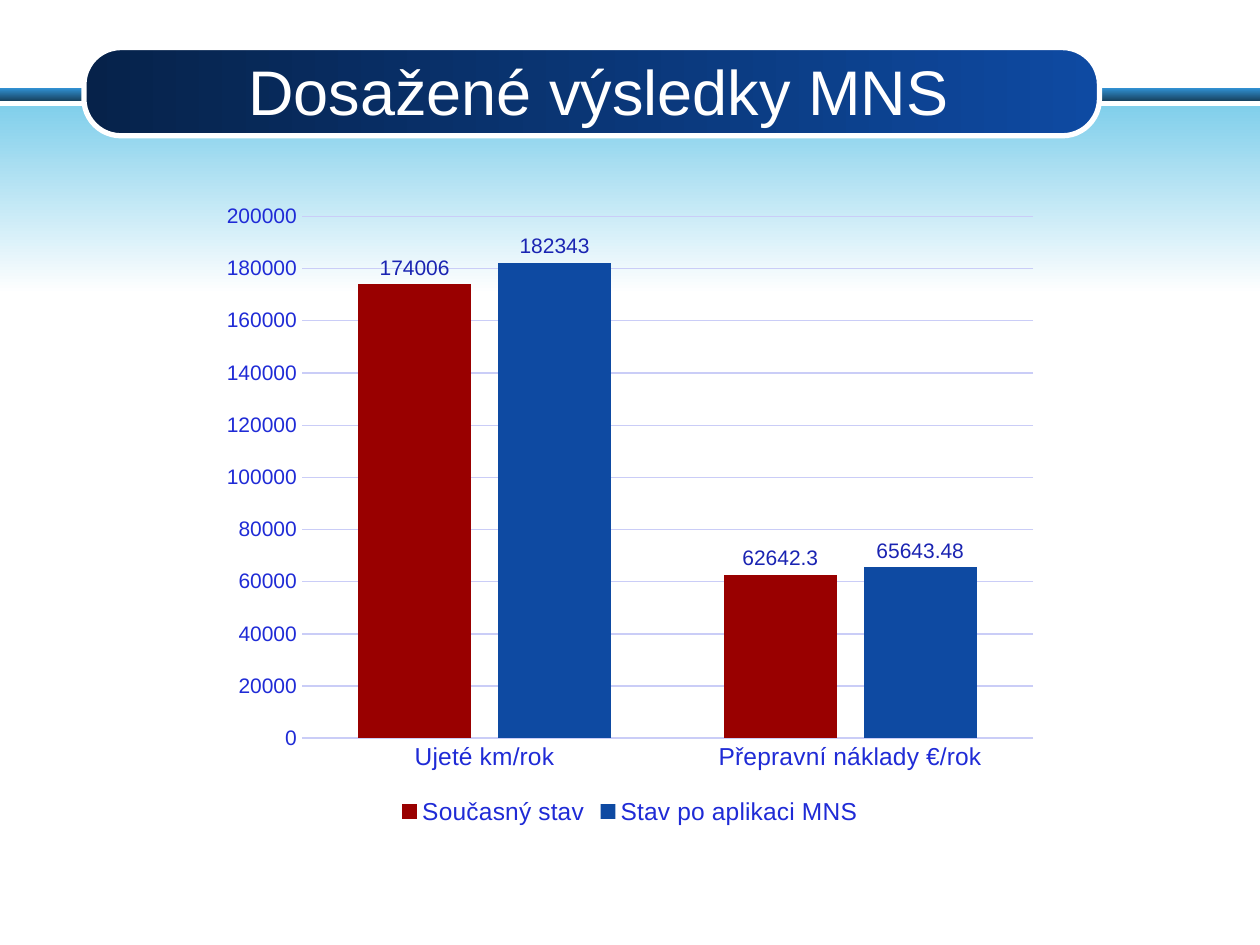
"""Build a slide with a title band and a clustered column chart."""
import pptx
import pptx.chart.data
import pptx.dml.color
import pptx.enum.chart
import pptx.enum.shapes
import pptx.enum.text
import pptx.util

Pt = pptx.util.Pt
RGBColor = pptx.dml.color.RGBColor
SHAPE = pptx.enum.shapes.MSO_SHAPE
CHART = pptx.enum.chart

WHITE = RGBColor(0xFF, 0xFF, 0xFF)
SKY = RGBColor(0x81, 0xCF, 0xEB)
AZURE = RGBColor(0x31, 0x91, 0xD3)
STEEL = RGBColor(0x17, 0x43, 0x61)
NAVY = RGBColor(0x06, 0x22, 0x4A)
BLUE = RGBColor(0x0E, 0x4A, 0xA2)
RED = RGBColor(0x99, 0x00, 0x00)
INK = RGBColor(0x1F, 0x2B, 0xD6)
LABEL = RGBColor(0x1A, 0x24, 0xB2)
GRID = RGBColor(0xCA, 0xCD, 0xF7)


class Deck:
    def __init__(self, face="Arial"):
        self.face = face
        self.prs = pptx.Presentation()
        self.prs.slide_width, self.prs.slide_height = Pt(720), Pt(540)
        self.slide = self.prs.slides.add_slide(self.prs.slide_layouts[6])

    def style(self, font, size, color):
        font.name, font.size, font.color.rgb = self.face, Pt(size), color
        font.bold = False

    def band(self, box, start, end, angle=270, kind=SHAPE.RECTANGLE):
        shape = self.slide.shapes.add_shape(kind, *map(Pt, box))
        shape.shadow.inherit = False
        shape.fill.gradient()
        shape.fill.gradient_angle = angle
        for stop, color in zip(shape.fill.gradient_stops, (start, end)):
            stop.color.rgb = color
        shape.line.fill.background()
        return shape

    def pill(self, box, start, end, edge, round_by):
        shape = self.band(box, start, end, 0, SHAPE.ROUNDED_RECTANGLE)
        shape.adjustments[0] = round_by
        shape.line.color.rgb = edge
        shape.line.width = Pt(3)

    def title(self, box, text, size, color):
        frame = self.slide.shapes.add_textbox(*map(Pt, box)).text_frame
        frame.word_wrap = True
        frame.vertical_anchor = pptx.enum.text.MSO_ANCHOR.MIDDLE
        frame.text = text
        para = frame.paragraphs[0]
        para.alignment = pptx.enum.text.PP_ALIGN.CENTER
        self.style(para.runs[0].font, size, color)

    def chart(self, box, cats, rows):
        data = pptx.chart.data.CategoryChartData()
        data.categories = cats
        for name, vals, _ in rows:
            data.add_series(name, vals)
        chart = self.slide.shapes.add_chart(
            CHART.XL_CHART_TYPE.COLUMN_CLUSTERED, *map(Pt, box), data).chart
        self.style(chart.font, 12, INK)
        chart.has_title = False
        chart.has_legend = True
        chart.legend.position = CHART.XL_LEGEND_POSITION.BOTTOM
        chart.legend.include_in_layout = False
        self.style(chart.legend.font, 14, INK)
        self.axes(chart.category_axis, chart.value_axis)
        plot = chart.plots[0]
        plot.gap_width, plot.overlap, plot.vary_by_categories = 100, -24, False
        for bars, (_, _, color) in zip(plot.series, rows):
            bars.format.fill.solid()
            bars.format.fill.fore_color.rgb = color
            bars.invert_if_negative = False
            labels = bars.data_labels
            labels.show_value = True
            labels.position = CHART.XL_LABEL_POSITION.OUTSIDE_END
            self.style(labels.font, 12, LABEL)

    def axes(self, cat, val):
        for axis, size in ((cat, 14), (val, 12)):
            axis.major_tick_mark = CHART.XL_TICK_MARK.NONE
            axis.minor_tick_mark = CHART.XL_TICK_MARK.NONE
            self.style(axis.tick_labels.font, size, INK)
        val.minimum_scale, val.maximum_scale, val.major_unit = 0, 200000, 20000
        val.has_major_gridlines = True
        val.format.line.fill.background()
        for line, width in ((cat.format.line, 1), (val.major_gridlines.format.line, 0.75)):
            line.color.rgb = GRID
            line.width = Pt(width)


def main():
    deck = Deck()
    deck.band((0, 50.4, 720, 7.2), AZURE, STEEL)
    deck.band((0, 60.5, 720, 107.3), SKY, WHITE)
    deck.pill((48, 27.2, 580.3, 50.4), NAVY, BLUE, WHITE, 0.42)
    deck.title((66, 29.5, 552, 44.6), "Dosažené výsledky MNS", 36, WHITE)
    deck.chart((120, 110, 480, 364.5), ("Ujeté km/rok", "Přepravní náklady €/rok"), (
        ("Současný stav", (174006, 62642.3), RED),
        ("Stav po aplikaci MNS", (182343, 65643.48), BLUE)))
    deck.prs.save("out.pptx")


if __name__ == "__main__":
    main()
